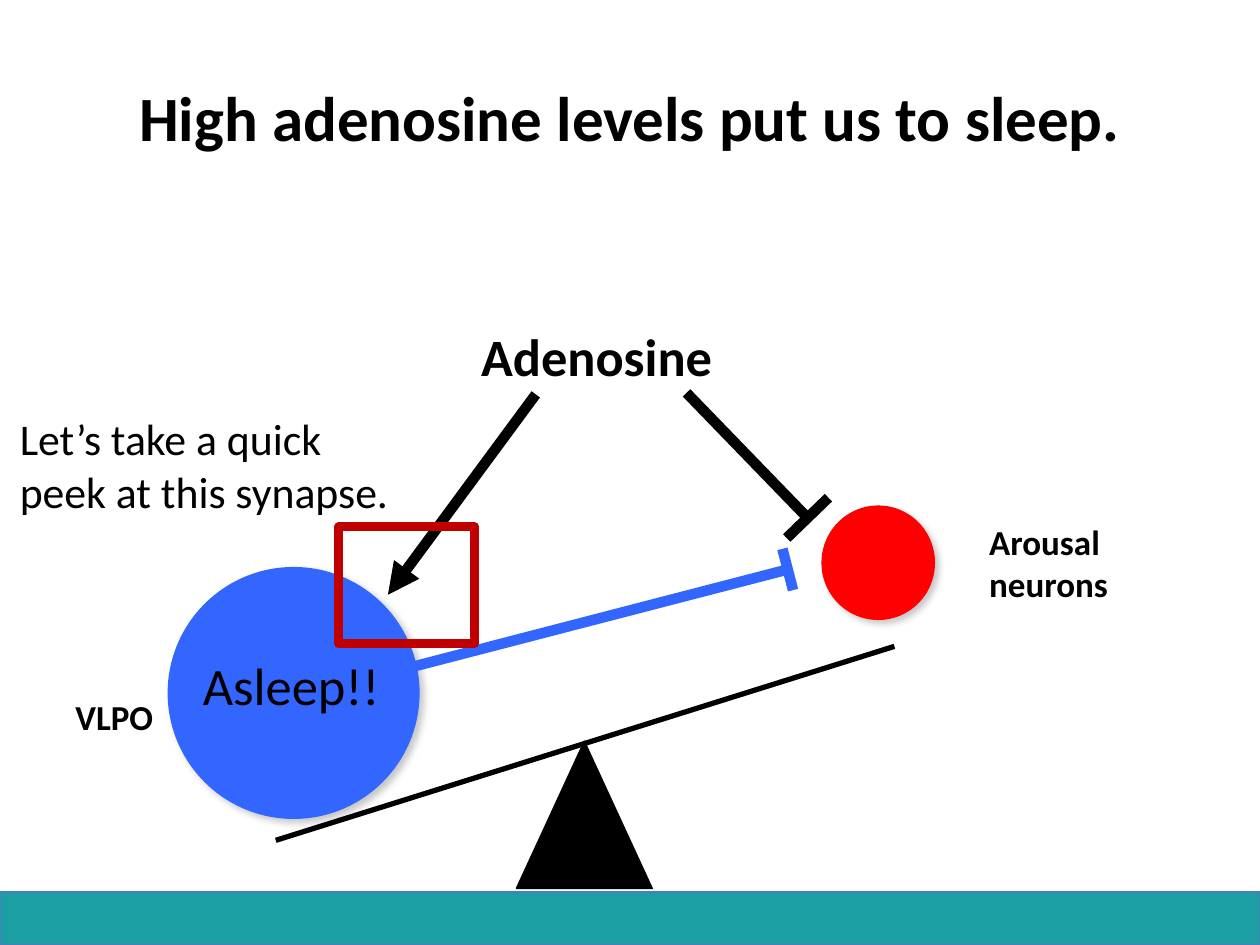
from dataclasses import dataclass
from math import hypot

from lxml.etree import SubElement
from pptx import Presentation
from pptx.dml.color import RGBColor
from pptx.enum.shapes import MSO_CONNECTOR as Connector, MSO_SHAPE as Shape
from pptx.enum.text import MSO_ANCHOR as Anchor, MSO_AUTO_SIZE as AutoSize, PP_ALIGN as Align
from pptx.oxml.ns import qn
from pptx.util import Cm, Pt


@dataclass(frozen=True)
class Theme:
    font: str = "Calibri"
    black: str = "000000"
    blue: str = "3366FF"
    red: str = "FF0000"
    frame: str = "C00000"
    teal: str = "1C9FA3"
    edge: str = "4B7EBC"
    shadow: str = "808080"
    title: int = 36
    large: int = 30
    body: int = 25
    label: int = 20


THEME = Theme()


def color(value):
    return RGBColor.from_string(value)


def write(shape, text, size, bold=False, align=Align.LEFT, anchor=Anchor.TOP,
          wrap=True, grow=True, before=0):
    """Fill a shape with text, one paragraph a line."""
    frame = shape.text_frame
    frame.text = text
    frame.word_wrap = wrap
    frame.vertical_anchor = anchor
    frame.auto_size = AutoSize.SHAPE_TO_FIT_TEXT if grow else AutoSize.NONE
    for paragraph in frame.paragraphs:
        paragraph.alignment = align
        paragraph.space_before = Pt(before)
        font = paragraph.runs[0].font
        font.name, font.size, font.bold = THEME.font, Pt(size), bold
        font.color.rgb = color(THEME.black)


def add_text(slide, box, text, size, **text_format):
    shape = slide.shapes.add_textbox(*map(Cm, box))
    write(shape, text, size, **text_format)


def add_figure(slide, kind, box, fill=None, line=None, width=0.75):
    shape = slide.shapes.add_shape(kind, *map(Cm, box))
    shape.shadow.inherit = False
    if fill:
        shape.fill.solid()
        shape.fill.fore_color.rgb = color(fill)
    else:
        shape.fill.background()
    if line:
        shape.line.color.rgb = color(line)
        shape.line.width = Pt(width)
    else:
        shape.line.fill.background()
    return shape


def add_shadow(shape, tint, alpha, blur, distance, angle):
    effects = shape._element.spPr.find(qn("a:effectLst"))
    shadow = SubElement(effects, qn("a:outerShdw"), blurRad=str(Pt(blur)),
                        dist=str(Pt(distance)), dir=str(angle * 60000), rotWithShape="0")
    tone = SubElement(shadow, qn("a:srgbClr"), val=tint)
    SubElement(tone, qn("a:alpha"), val=str(alpha * 1000))


def add_neurons(slide, box, fill):
    add_shadow(add_figure(slide, Shape.OVAL, box, fill), THEME.shadow, 43, 4, 3, 45)


def add_line(shapes, start, end, tint, width, arrow=False):
    line = shapes.add_connector(Connector.STRAIGHT, *map(Cm, (*start, *end)))
    line.line.color.rgb = color(tint)
    line.line.width = Pt(width)
    properties = line._element.spPr
    if arrow:
        SubElement(properties.find(qn("a:ln")), qn("a:tailEnd"), type="triangle")
    SubElement(properties, qn("a:effectLst"))


def add_inhibition(slide, start, end, bar, tint):
    """Draw a stem that ends in a crossbar at a right angle."""
    shapes = slide.shapes.add_group_shape().shapes
    across, down = end[0] - start[0], end[1] - start[1]
    scale = bar / 2 / hypot(across, down)
    x, y = -down * scale, across * scale
    add_line(shapes, start, end, tint, 6)
    add_line(shapes, (end[0] - x, end[1] - y), (end[0] + x, end[1] + y), tint, 6)


def main():
    presentation = Presentation()
    presentation.slide_width, presentation.slide_height = Cm(25.4), Cm(19.05)
    slide = presentation.slides.add_slide(presentation.slide_layouts[5])

    # Footer band and title
    band = add_figure(slide, Shape.RECTANGLE, (0, 17.98, 25.4, 1.07), THEME.teal, THEME.edge)
    add_shadow(band, THEME.black, 35, 3.1, 1.8, 90)
    title = slide.shapes.title
    title.left, title.top, title.width, title.height = map(Cm, (0, 0.76, 25.4, 3.18))
    write(title, "High adenosine levels put us to sleep.", THEME.title, bold=True,
          align=Align.CENTER, anchor=Anchor.MIDDLE, grow=False)

    # Adenosine excites the sleep neurons
    add_text(slide, (9.45, 6.4, 5.51, 1.55), "Adenosine", THEME.large, bold=True)
    add_line(slide.shapes, (10.8, 7.95), (7.82, 11.99), THEME.black, 6, arrow=True)

    # Labels
    add_text(slide, (19.69, 10.36, 2.97, 1.96), "Arousal\nneurons", THEME.label,
             bold=True, wrap=False)
    add_text(slide, (1.27, 13.89, 2.11, 1.12), "VLPO", THEME.label, bold=True, wrap=False)
    add_text(slide, (0.15, 8.18, 8.51, 3.45), "Let’s take a quick peek at this synapse.",
             THEME.body, grow=False, before=5)

    # Neuron groups; the sleep side inhibits the arousal side
    add_neurons(slide, (3.38, 11.43, 5.08, 5.08), THEME.blue)
    add_neurons(slide, (16.56, 10.19, 2.29, 2.31), THEME.red)
    add_inhibition(slide, (8.13, 13.49), (15.88, 11.48), 0.86, THEME.blue)
    add_text(slide, (3.84, 13.03, 4.11, 1.55), "Asleep!!", THEME.large, wrap=False)

    # Seesaw
    add_figure(slide, Shape.ISOSCELES_TRIANGLE, (10.41, 14.94, 2.74, 2.97),
               THEME.black, THEME.black)
    add_line(slide.shapes, (5.56, 16.94), (18.03, 13.03), THEME.black, 3)

    # Synapse frame, and adenosine inhibiting the arousal neurons
    add_figure(slide, Shape.RECTANGLE, (6.83, 10.62, 2.74, 2.36), line=THEME.frame, width=5)
    add_inhibition(slide, (13.84, 7.92), (16.28, 10.44), 1.17, THEME.black)

    presentation.save("out.pptx")


if __name__ == "__main__":
    main()
